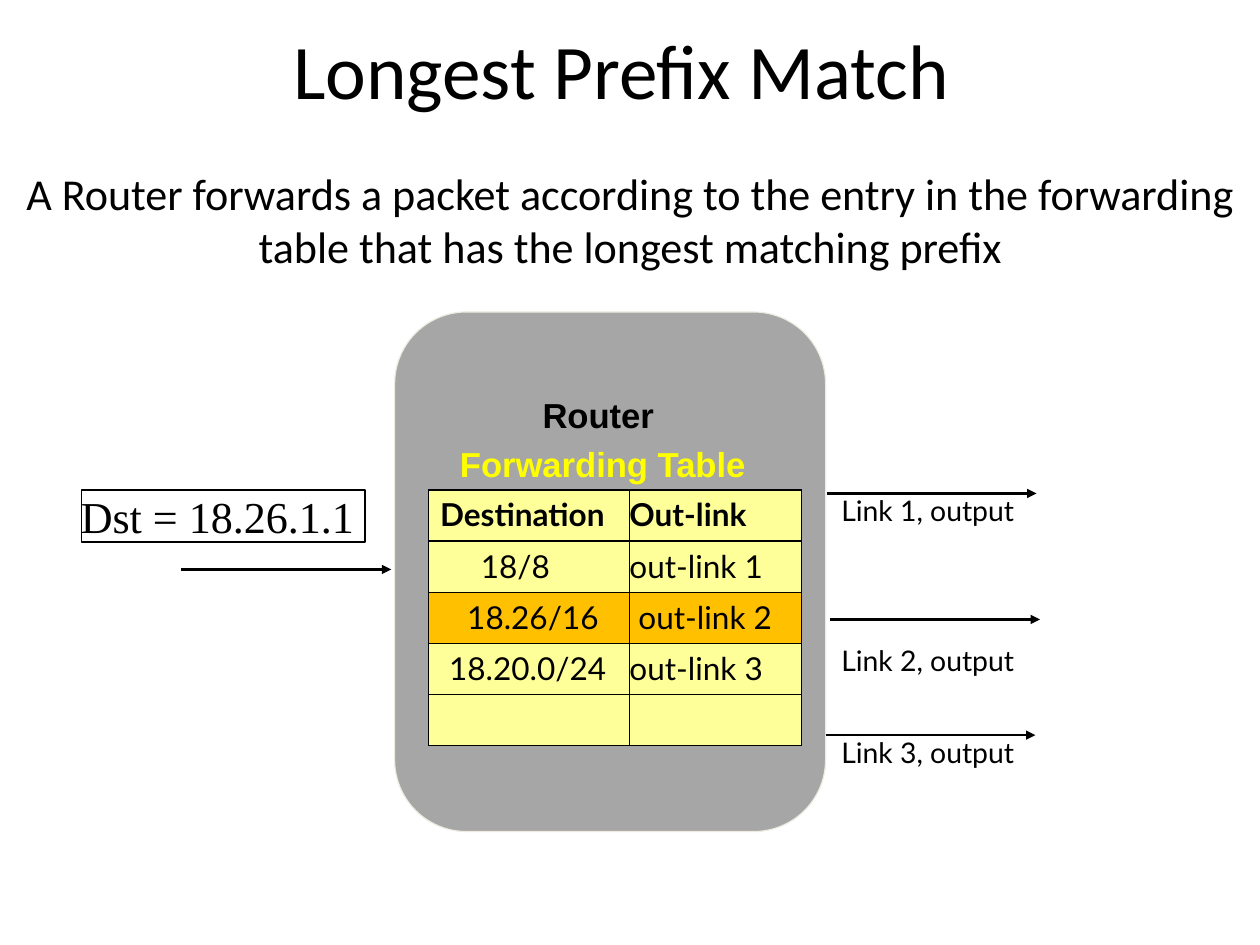
from typing import NamedTuple

from lxml.etree import SubElement
from pptx import Presentation
from pptx.dml.color import RGBColor
from pptx.enum.shapes import MSO_CONNECTOR, MSO_SHAPE
from pptx.enum.text import MSO_ANCHOR as ANCHOR, MSO_AUTO_SIZE as FIT, PP_ALIGN as ALIGN
from pptx.oxml.ns import qn
from pptx.util import Inches, Pt

COLORS = {
    "black": "000000", "white": "FFFFFF", "gray": "A6A6A6", "cream": "EEECE1",
    "yellow": "FFFF00", "pale": "FFFF99", "orange": "FFC000",
}


class Label(NamedTuple):
    text: str
    box: tuple[float, float, float, float]
    size: int
    font: str
    color: str = "black"
    bold: bool = False
    align: ALIGN = ALIGN.CENTER


class Link(NamedTuple):
    text: str
    x: float
    y: float
    label_top: float


class Route(NamedTuple):
    destination: str
    out_link: str
    indents: tuple[float, float]
    fill: str = "pale"
    bold: bool = False


LABELS = [
    Label("A Router forwards a packet according to the entry in the forwarding "
          "table that has the longest matching prefix",
          (0.09, 1.42, 10.93, 1.05), 28, "Calibri"),
    Label("Router", (3.64, 3.42, 3.27, 0.48), 22, "Arial", bold=True),
    Label("Forwarding Table", (3.68, 3.85, 3.27, 0.48), 22, "Arial", "yellow", True),
]
LINKS = [
    Link("Link 1, output", 7.29, 4.35, 4.3),
    Link("Link 2, output", 7.32, 5.46, 5.62),
    Link("Link 3, output", 7.28, 6.48, 6.43),
]
ROUTES = [
    Route("Destination", "Out-link", (0.1, 0), bold=True),
    Route("18/8", "out-link 1", (0.46, 0)),
    Route("18.26/16", "out-link 2", (0.34, 0.08), "orange"),
    Route("18.20.0/24", "out-link 3", (0.18, 0)),
    Route("", "", (0.1, 0.1)),
]
ARROW_LENGTH = 1.85
COLUMN_WIDTHS = (1.77, 1.52)
ROW_HEIGHT = 0.45


def rgb(name: str) -> RGBColor:
    return RGBColor.from_string(COLORS[name])


def inches(box: tuple) -> list:
    return [Inches(v) for v in box]


def set_font(p, size: int, name: str, color: str = "black", bold: bool = False) -> None:
    p.font.size, p.font.name, p.font.bold = Pt(size), name, bold
    p.font.color.rgb = rgb(color)


def add_label(slide, label: Label) -> None:
    tf = slide.shapes.add_textbox(*inches(label.box)).text_frame
    tf.word_wrap = True
    p = tf.paragraphs[0]
    p.text, p.alignment = label.text, label.align
    set_font(p, label.size, label.font, label.color, label.bold)


def add_box(slide, kind, box: tuple, fill: str, line: str, width: float):
    sp = slide.shapes.add_shape(kind, *inches(box))
    sp.shadow.inherit = False
    sp.fill.solid()
    sp.fill.fore_color.rgb = rgb(fill)
    sp.line.color.rgb, sp.line.width = rgb(line), Pt(width)
    return sp


def add_arrow(slide, x: float, y: float) -> None:
    ends = inches((x, y, x + ARROW_LENGTH, y))
    cx = slide.shapes.add_connector(MSO_CONNECTOR.STRAIGHT, *ends)
    cx.line.color.rgb, cx.line.width = rgb("black"), Pt(1.5)
    SubElement(cx.line._get_or_add_ln(), qn("a:tailEnd"), type="triangle")
    SubElement(cx._element.spPr, qn("a:effectLst"))


def set_borders(cell) -> None:
    tc_pr = cell._tc.get_or_add_tcPr()
    for side in ("a:lnL", "a:lnR", "a:lnT", "a:lnB"):
        ln = SubElement(tc_pr, qn(side), w=str(Pt(1)))
        fill = SubElement(ln, qn("a:solidFill"))
        SubElement(fill, qn("a:srgbClr"), val=COLORS["black"])


def add_forwarding_table(slide, left: float, top: float) -> None:
    box = (left, top, sum(COLUMN_WIDTHS), ROW_HEIGHT * len(ROUTES))
    table = slide.shapes.add_table(len(ROUTES), len(COLUMN_WIDTHS), *inches(box)).table
    for column, width in zip(table.columns, COLUMN_WIDTHS):
        column.width = Inches(width)
    for row, route in zip(table.rows, ROUTES):
        row.height = Inches(ROW_HEIGHT)
        texts = (route.destination, route.out_link)
        for cell, text, indent in zip(row.cells, texts, route.indents):
            set_borders(cell)
            cell.fill.solid()
            cell.fill.fore_color.rgb = rgb(route.fill)
            cell.margin_left, cell.margin_right = Inches(indent), 0
            p = cell.text_frame.paragraphs[0]
            p.text = text
            set_font(p, 20, "Lato", bold=route.bold)


def main() -> None:
    prs = Presentation()
    prs.slide_width, prs.slide_height = Inches(11.11), Inches(8.33)
    slide = prs.slides.add_slide(prs.slide_layouts[5])

    # Title
    title = slide.shapes.title
    title.left, title.top, title.width, title.height = inches((0, -0.09, 10.95, 1.39))
    tf = title.text_frame
    tf.text = "Longest Prefix Match"
    tf.auto_size, tf.vertical_anchor = FIT.NONE, ANCHOR.MIDDLE
    tf.paragraphs[0].alignment = ALIGN.CENTER
    set_font(tf.paragraphs[0], 49, "Calibri")

    # Router with its headings and forwarding table
    add_box(slide, MSO_SHAPE.ROUNDED_RECTANGLE, (3.48, 2.75, 3.8, 4.58),
            "gray", "cream", 0.75)
    for label in LABELS:
        add_label(slide, label)
    add_forwarding_table(slide, 3.78, 4.32)

    # Incoming packet
    packet = add_box(slide, MSO_SHAPE.RECTANGLE, (0.72, 4.32, 2.5, 0.46),
                     "white", "black", 1)
    tf = packet.text_frame
    tf.word_wrap, tf.vertical_anchor = False, ANCHOR.MIDDLE
    p = tf.paragraphs[0]
    p.text, p.alignment = "Dst = 18.26.1.1", ALIGN.RIGHT
    set_font(p, 28, "Times New Roman")
    add_arrow(slide, 1.6, 5.02)

    # Output links
    for link in LINKS:
        add_arrow(slide, link.x, link.y)
        add_label(slide, Label(link.text, (7.32, link.label_top, 2.31, 0.4),
                               18, "Lato", align=ALIGN.LEFT))

    prs.save("out.pptx")


if __name__ == "__main__":
    main()
